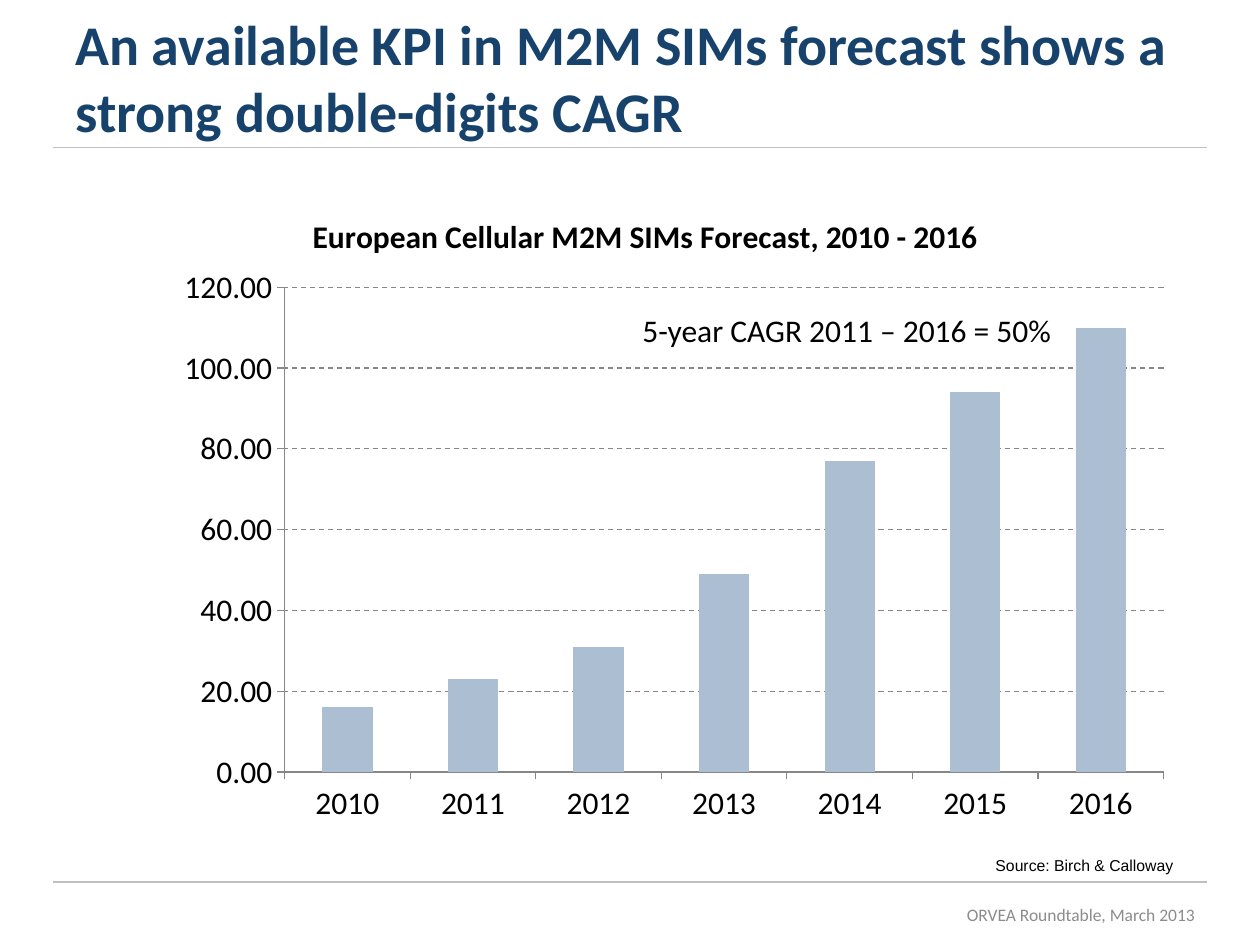
from lxml.etree import SubElement
from pptx import Presentation
from pptx.chart.data import CategoryChartData
from pptx.dml.color import RGBColor
from pptx.enum.chart import XL_CHART_TYPE, XL_TICK_MARK
from pptx.enum.dml import MSO_LINE
from pptx.enum.shapes import MSO_CONNECTOR
from pptx.enum.text import MSO_ANCHOR, MSO_AUTO_SIZE, PP_ALIGN
from pptx.oxml import parse_xml
from pptx.oxml.ns import nsdecls, qn
from pptx.util import Inches, Pt

COLORS = {
    "title": "17426B",
    "text": "000000",
    "footer": "8C8C8C",
    "rule": "C0C0C0",
    "axis": "878787",
    "bar": "ACBED1",
}


def color(name):
    return RGBColor.from_string(COLORS[name])


def style_font(font, size, tone="text", name="Calibri", bold=False):
    font.name, font.size, font.bold = name, Pt(size), bold
    font.color.rgb = color(tone)


def add_text(page, area, text, size, align=PP_ALIGN.LEFT,
             anchor=MSO_ANCHOR.TOP, wrap=True, **style):
    box = page.shapes.add_textbox(*map(Inches, area))
    frame = box.text_frame
    frame.word_wrap, frame.vertical_anchor = wrap, anchor
    if not wrap:
        frame.auto_size = MSO_AUTO_SIZE.SHAPE_TO_FIT_TEXT
    para = frame.paragraphs[0]
    para.text, para.alignment = text, align
    style_font(para.font, size, **style)


def add_rule(page, left, top, width):
    rule = page.shapes.add_connector(
        MSO_CONNECTOR.STRAIGHT, Inches(left), Inches(top),
        Inches(left + width), Inches(top))
    rule.line.color.rgb, rule.line.width = color("rule"), Pt(0.75)
    SubElement(rule._element.spPr, qn("a:effectLst"))


def manual_layout(x, y, size=None, inner=False):
    target = '<c:layoutTarget val="inner"/>' if inner else ""
    extent = '<c:w val="{}"/><c:h val="{}"/>'.format(*size) if size else ""
    return parse_xml(
        f'<c:layout {nsdecls("c")}><c:manualLayout>{target}'
        '<c:xMode val="edge"/><c:yMode val="edge"/>'
        f'<c:x val="{x}"/><c:y val="{y}"/>{extent}'
        '</c:manualLayout></c:layout>')


def place_layout(parent, layout, after=None):
    for old in parent.findall(qn("c:layout")):
        parent.remove(old)
    if after is None:
        parent.insert(0, layout)
    else:
        after.addnext(layout)


def style_axis(axis):
    axis.major_tick_mark = XL_TICK_MARK.OUTSIDE
    axis.minor_tick_mark = XL_TICK_MARK.NONE
    axis.format.line.color.rgb = color("axis")
    axis.format.line.width = Pt(0.75)
    style_font(axis.tick_labels.font, 18)


def add_forecast_chart(page, area):
    data = CategoryChartData(number_format="0.00")
    data.categories = [str(year) for year in range(2010, 2017)]
    data.add_series("Series 1", (16, 23, 31, 49, 77, 94, 110))
    chart = page.shapes.add_chart(
        XL_CHART_TYPE.COLUMN_CLUSTERED, *map(Inches, area), data).chart
    style_font(chart.font, 18)
    chart.has_legend = False

    chart.has_title = True
    para = chart.chart_title.text_frame.paragraphs[0]
    para.text = "European Cellular M2M SIMs Forecast, 2010 - 2016"
    style_font(para.font, 18, bold=True)
    title = chart.chart_title._element
    place_layout(title, manual_layout(0.2, 0.03), title.find(qn("c:tx")))
    plot_area = chart._chartSpace.chart.plotArea
    place_layout(plot_area, manual_layout(0.18, 0.15, (0.79, 0.74), True))

    plot = chart.plots[0]
    plot.gap_width, plot.vary_by_categories = 150, False
    fill = plot.series[0].format.fill
    fill.solid()
    fill.fore_color.rgb = color("bar")

    style_axis(chart.category_axis)
    values = chart.value_axis
    style_axis(values)
    values.minimum_scale, values.maximum_scale, values.major_unit = 0, 120, 20
    values.tick_labels.number_format = "0.00"
    values.tick_labels.number_format_is_linked = False
    values.has_major_gridlines = True
    grid = values.major_gridlines.format.line
    grid.color.rgb, grid.width = color("axis"), Pt(0.75)
    grid.dash_style = MSO_LINE.DASH


def add_header(page, left, top, width, height):
    add_rule(page, left, 1.17, width)
    add_text(page, (left + 0.08, top, 9, height),
             "An available KPI in M2M SIMs forecast shows a strong double-digits CAGR",
             32, anchor=MSO_ANCHOR.BOTTOM, tone="title", bold=True)


def add_footer(page, left, top, width, height):
    add_rule(page, left, top, width)
    add_text(page, (left + width - 2.83, top + 0.02, 2.83, height),
             "ORVEA Roundtable, March 2013", 10, align=PP_ALIGN.RIGHT,
             anchor=MSO_ANCHOR.MIDDLE, tone="footer")


def add_body(page, left, top, width, height):
    add_forecast_chart(page, (left, top, width, height))
    add_text(page, (left + 6.94, top + 5.24, 1.8, 0.25),
             "Source: Birch & Calloway", 9, align=PP_ALIGN.RIGHT,
             wrap=False, name="Arial")
    add_text(page, (left + 4.33, top + 0.92, 3.49, 0.4),
             "5-year CAGR 2011 – 2016 = 50%", 18, wrap=False)


def main():
    deck = Presentation()
    deck.slide_width, deck.slide_height = Inches(10), Inches(7.5)
    page = deck.slides.add_slide(deck.slide_layouts[6])
    add_header(page, 0.42, -0.08, 9.16, 1.27)
    add_footer(page, 0.42, 7, 9.16, 0.48)
    add_body(page, 0.67, 1.5, 8.83, 5.2)
    deck.save("out.pptx")


if __name__ == "__main__":
    main()
